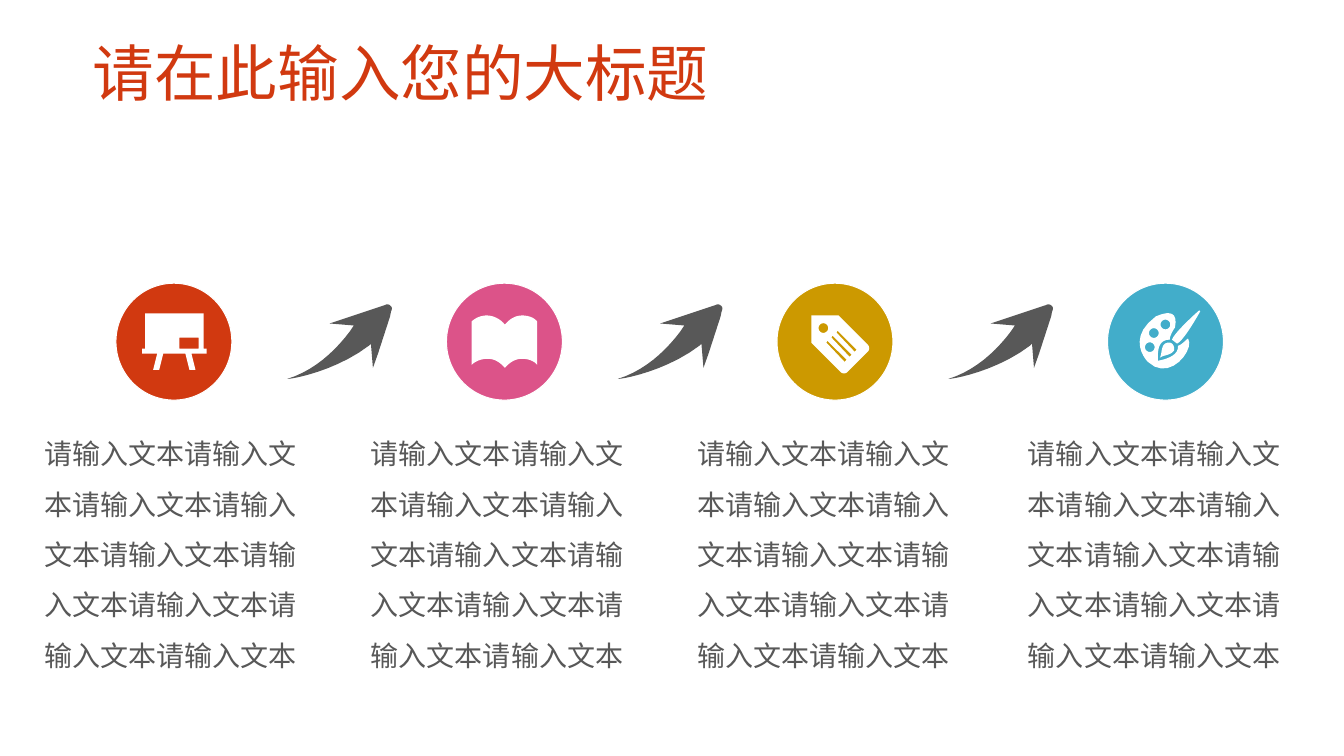
import math
from lxml import etree
from pptx import Presentation
from pptx import util as u
from pptx.dml.color import RGBColor
from pptx.enum import shapes, text
from pptx.oxml.ns import qn

FONT = "Noto Sans CJK SC"
GRID = 0.72  # points per unit of the outline coordinates
DOT_RADIUS = 4.8
colour = RGBColor.from_string


def write(frame, words, size, fill, spacing, anchor):
    frame.word_wrap = True
    frame.auto_size = text.MSO_AUTO_SIZE.NONE
    frame.vertical_anchor = anchor
    paragraph = frame.paragraphs[0]
    paragraph.alignment = text.PP_ALIGN.LEFT
    paragraph.line_spacing = spacing
    run = paragraph.add_run()
    run.text = words
    run.font.size = u.Pt(size)
    run.font.name = FONT
    run.font.color.rgb = colour(fill)
    etree.SubElement(run.font._element, qn("a:ea")).set("typeface", FONT)


def draw(left, top, contours, dots, fill):
    """Fill closed contours; a pair is a corner, six numbers are a Bézier curve."""
    rings = []
    for contour in contours:
        ring = []
        for step in contour:
            if len(step) == 2:
                ring.append(step)
                continue
            (x0, y0), (x1, y1, x2, y2, x3, y3) = ring[-1], step
            for t in [n / 10 for n in range(1, 11)]:
                a, b, c, d = (1 - t) ** 3, 3 * t * (1 - t) ** 2, 3 * t * t * (1 - t), t ** 3
                ring.append((a * x0 + b * x1 + c * x2 + d * x3,
                             a * y0 + b * y1 + c * y2 + d * y3))
        rings.append(ring)
    for x, y in dots:
        rings.append([(x + DOT_RADIUS * math.cos(n * math.pi / 12),
                       y + DOT_RADIUS * math.sin(n * math.pi / 12)) for n in range(24)])
    builder = None
    for ring in rings:
        points = [(u.Pt(left + x * GRID), u.Pt(top + y * GRID)) for x, y in ring]
        if builder is None:
            builder = slide.shapes.build_freeform(*points[0])
        else:
            builder.move_to(*points[0])
        builder.add_line_segments(points[1:], close=True)
    outline = builder.convert_to_shape()
    outline.shadow.inherit = False
    outline.fill.solid()
    outline.fill.fore_color.rgb = colour(fill)
    outline.line.fill.background()


# Outlines are measured from the top left corner of their step's circle.
arrow = [[(269, 21), (271, 21, 272, 22, 273, 23), (274, 24, 274, 26, 273, 28),
          (272, 33), (260, 70), (255, 84), (253, 60), (251, 62),
          (218, 87, 176, 95, 170, 95), (196, 87, 217, 68, 232, 48),
          (236, 42), (212, 40), (266, 22), (267, 22, 268, 21, 269, 21)]]

easel = [[(90, 65), (87, 65), (87, 30), (29, 30), (29, 65), (26, 65), (26, 70),
          (41, 70), (37, 86), (43, 86), (47, 70), (69, 70), (73, 86), (79, 86),
          (75, 70), (90, 70)],
         [(63, 54), (82, 54), (82, 65), (63, 65)]]

book = [[(58, 41), (53, 35, 46, 32, 40, 32), (35, 32, 29, 34, 25, 38),
         (25, 81), (29, 77, 35, 75, 41, 75), (47, 75, 53, 78, 58, 84),
         (63, 78, 69, 75, 75, 75), (81, 75, 87, 77, 90, 81),
         (90, 38), (87, 34, 81, 32, 75, 32), (69, 32, 63, 35, 58, 41)]]

tag = [[(90, 61), (61, 32), (34, 32), (34, 59), (63, 88),
        (65, 90, 68, 90, 70, 88), (90, 68), (92, 66, 92, 63, 90, 61)]]
for shift in (0, 5, 10):
    tag.append([(x + shift, y - shift) for x, y in [(67, 78), (49, 59), (50, 57), (69, 76)]])

palette = [[(70, 62), (71, 73, 55, 76, 50, 77), (50, 69, 49, 56, 62, 56),
            (61, 55, 64, 48, 67, 44), (71, 24, 55, 30, 48, 33),
            (18, 55, 39, 77, 40, 78), (62, 99, 87, 65, 80, 55),
            (79, 55, 73, 62, 70, 62)],
           [(69, 60), (76, 57, 92, 28, 92, 28), (91, 27),
            (91, 27, 67, 48, 64, 56), (65, 57, 68, 59, 69, 60)],
           [(57, 60), (53, 63, 54, 71, 52, 74), (56, 71, 62, 72, 66, 67),
            (67, 64, 65, 56, 57, 60)]]

steps = [("D13910", 24.5, easel, []),
         ("DC5389", 257.8, book, []),
         ("CC9900", 491, tag, [(46, 44.5)]),
         ("42ADCA", 727.2, palette, [(57.5, 41), (42, 63.5), (46, 49.5)])]

deck = Presentation()
deck.slide_width, deck.slide_height = u.Pt(960), u.Pt(540)
slide = deck.slides.add_slide(deck.slide_layouts[5])

title = slide.shapes.title
title.left, title.top, title.width, title.height = [u.Pt(n) for n in (59, 8.6, 841, 73.4)]
write(title.text_frame, "请在此输入您的大标题", size=44, fill="D13910", spacing=0.9,
      anchor=text.MSO_ANCHOR.BOTTOM)

circle_top = 202.3
for number, (accent, text_left, icon, dots) in enumerate(steps):
    circle_left = 82.8 + 236.1 * number
    circle = slide.shapes.add_shape(shapes.MSO_SHAPE.OVAL, u.Pt(circle_left), u.Pt(circle_top),
                                    u.Pt(82.8), u.Pt(83.5))
    circle.shadow.inherit = False
    circle.fill.solid()
    circle.fill.fore_color.rgb = colour(accent)
    circle.line.color.rgb = colour("FFFFFF")
    circle.line.width = u.Pt(0.75)
    draw(circle_left, circle_top, icon, dots, fill="FFFFFF")
    if number < len(steps) - 1:
        draw(circle_left, circle_top, arrow, [], fill="585858")
    description = slide.shapes.add_textbox(u.Pt(text_left), u.Pt(299.5), u.Pt(208.8), u.Pt(180.7))
    write(description.text_frame, "请输入文本" * 9, size=20, fill="585858", spacing=1.5,
          anchor=text.MSO_ANCHOR.MIDDLE)

deck.save("out.pptx")
